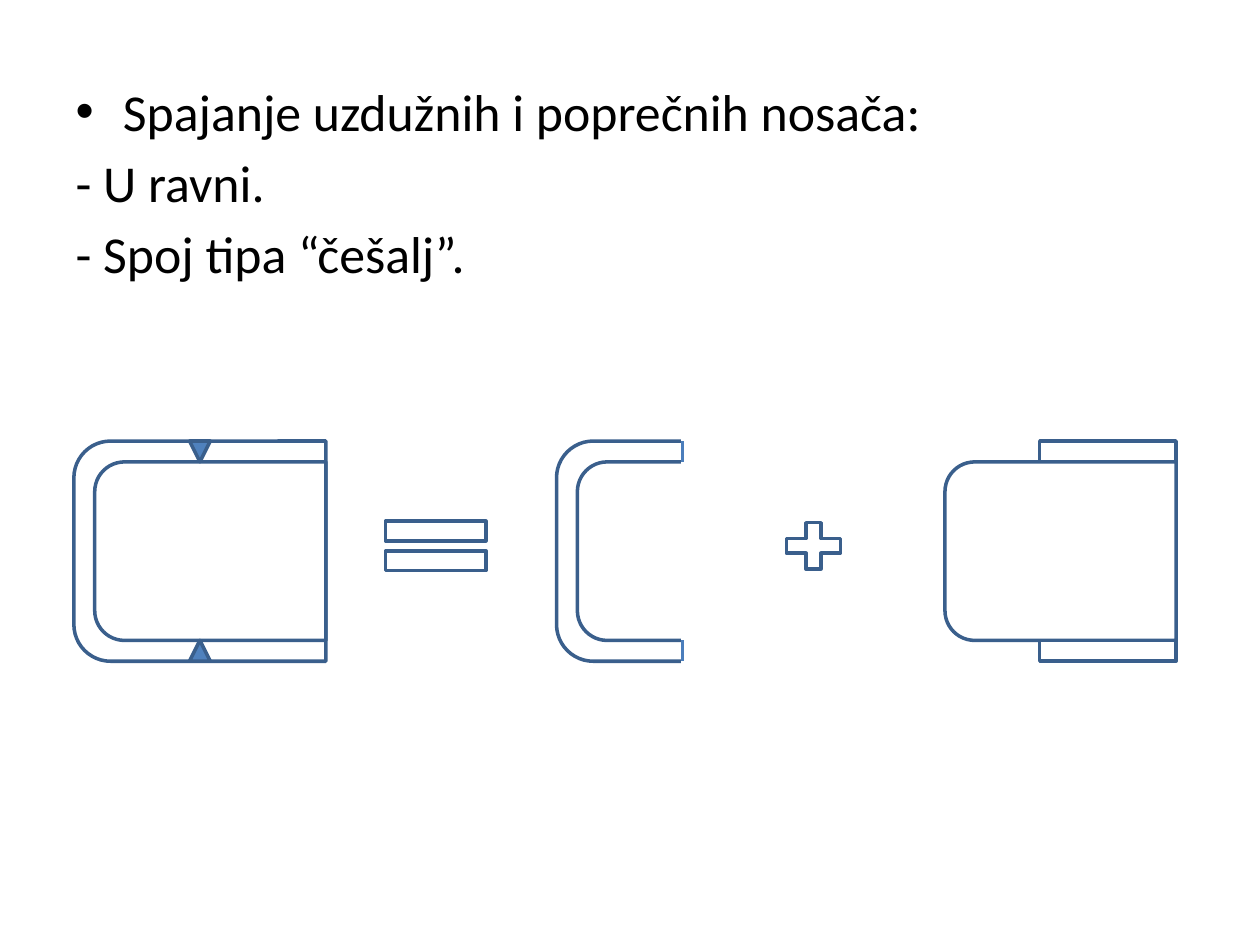
from lxml import etree
from pptx import Presentation
from pptx import util as u
from pptx.dml.color import RGBColor
from pptx.enum import shapes, text
from pptx.oxml import ns

COLORS = {"text": "000000", "paper": "FFFFFF", "outline": "3A5F8C",
          "weld": "4F81BD", "cut": "4B7EBC"}
LINE_WIDTH = 2
BEAM_WIDTH, BEAM_HEIGHT, FLANGE = 5.08, 4.44, 0.42
BEAM_TOP = 8.89
PLATE_WIDTH = 2.75
HEADING = "Spajanje uzdužnih i poprečnih nosača:"
JOINTS = ["- U ravni.", "- Spoj tipa “češalj”."]


def color(name):
    return RGBColor.from_string(COLORS[name])


def add_part(group, preset, left, top, width, height,
             fill="paper", outline="outline", rotation=0):
    part = group.shapes.add_shape(
        preset, u.Cm(left), u.Cm(top), u.Cm(width), u.Cm(height))
    part.rotation = rotation
    part.shadow.inherit = False
    part.fill.solid()
    part.fill.fore_color.rgb = color(fill)
    part.line.color.rgb = color(outline)
    part.line.width = u.Pt(LINE_WIDTH)


def add_channel(group, left, top, width, height):
    shift = (width - height) / 2
    add_part(group, shapes.MSO_SHAPE.ROUND_2_SAME_RECTANGLE,
             left + shift, top - shift, height, width, rotation=270)


def add_inner_channel(group, left, top):
    add_channel(group, left + FLANGE, top + FLANGE,
                BEAM_WIDTH - FLANGE, BEAM_HEIGHT - 2 * FLANGE)


def add_profile(group, left, top):
    add_channel(group, left, top, BEAM_WIDTH, BEAM_HEIGHT)
    add_inner_channel(group, left, top)


def flange_tops(top):
    return top, top + BEAM_HEIGHT - FLANGE


def add_cut_edge(group, x, top):
    edge = group.shapes.add_connector(
        shapes.MSO_CONNECTOR.STRAIGHT,
        u.Cm(x), u.Cm(top), u.Cm(x), u.Cm(top + FLANGE))
    edge.line.color.rgb = color("cut")
    edge.line.width = u.Pt(LINE_WIDTH)
    etree.SubElement(edge._element.spPr, ns.qn("a:effectLst"))


def draw_plated_beam(slide, left, top):
    group = slide.shapes.add_group_shape()
    add_inner_channel(group, left, top)
    for plate_top in flange_tops(top):
        add_part(group, shapes.MSO_SHAPE.RECTANGLE,
                 left + BEAM_WIDTH - PLATE_WIDTH, plate_top, PLATE_WIDTH, FLANGE)


def draw_cut_beam(slide, left, top):
    group = slide.shapes.add_group_shape()
    add_profile(group, left, top)
    cut = left + BEAM_WIDTH / 2
    add_part(group, shapes.MSO_SHAPE.RECTANGLE, cut, top - FLANGE,
             PLATE_WIDTH, BEAM_HEIGHT + 3 * FLANGE, outline="paper")
    for edge_top in flange_tops(top):
        add_cut_edge(group, cut, edge_top)


def draw_welded_beam(slide, left, top):
    group = slide.shapes.add_group_shape()
    add_profile(group, left, top)
    for weld_top, rotation in zip(flange_tops(top), (180, 0)):
        add_part(group, shapes.MSO_SHAPE.ISOSCELES_TRIANGLE,
                 left + (BEAM_WIDTH - FLANGE) / 2, weld_top, FLANGE, FLANGE,
                 fill="weld", rotation=rotation)


def draw_signs(slide):
    group = slide.shapes.add_group_shape()
    add_part(group, shapes.MSO_SHAPE.MATH_EQUAL, 7.41, 10.16, 2.75, 1.69)
    add_part(group, shapes.MSO_SHAPE.MATH_PLUS, 15.66, 10.37, 1.48, 1.27)


def write_joints(body, left, top, width, height):
    body.left, body.top = u.Cm(left), u.Cm(top)
    body.width, body.height = u.Cm(width), u.Cm(height)
    frame = body.text_frame
    frame.text = "\n".join([HEADING, *JOINTS])
    frame.auto_size = text.MSO_AUTO_SIZE.NONE
    for number, paragraph in enumerate(frame.paragraphs):
        paragraph.space_before = u.Pt(5.3)
        paragraph.font.name = "Calibri"
        paragraph.font.size = u.Pt(29.6)
        paragraph.font.color.rgb = color("text")
        if number:
            properties = paragraph._p.get_or_add_pPr()
            bullet = etree.Element(ns.qn("a:buNone"))
            properties.find(ns.qn("a:defRPr")).addprevious(bullet)


def main():
    deck = Presentation()
    deck.slide_width, deck.slide_height = u.Cm(25.4), u.Cm(19.05)
    slide = deck.slides.add_slide(deck.slide_layouts[1])
    title = slide.shapes.title._element
    title.getparent().remove(title)
    write_joints(slide.placeholders[1], 1.27, 1.47, 22.86, 4.45)
    draw_plated_beam(slide, 18.63, BEAM_TOP)
    draw_cut_beam(slide, 11.22, BEAM_TOP)
    draw_welded_beam(slide, 1.49, BEAM_TOP)
    draw_signs(slide)
    deck.save("out.pptx")


if __name__ == "__main__":
    main()
